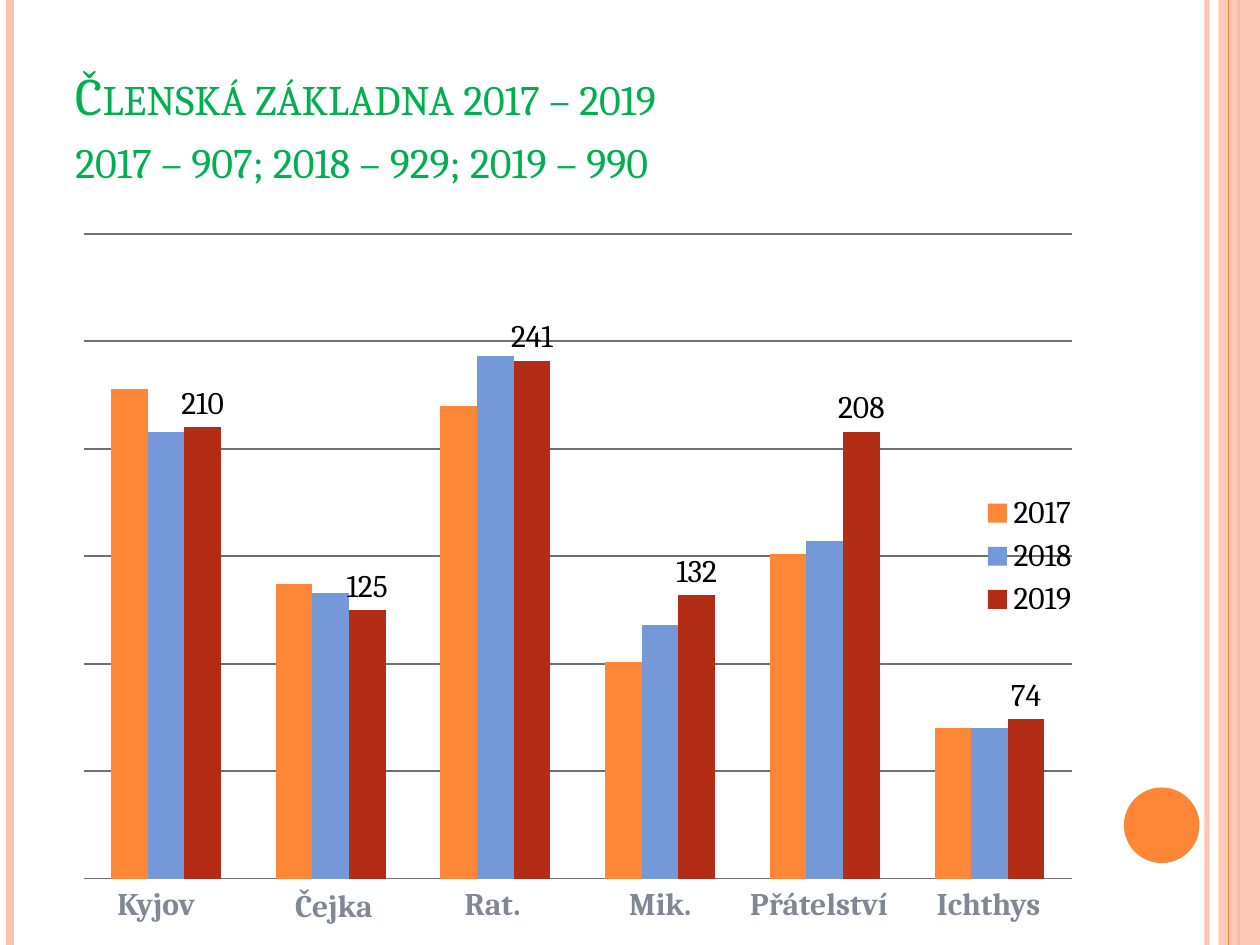
from lxml.etree import SubElement
from pptx import Presentation
from pptx.chart.data import CategoryChartData
from pptx.dml.color import RGBColor
from pptx.enum.chart import XL_CHART_TYPE as ChartType
from pptx.enum.chart import XL_LABEL_POSITION as LabelPos
from pptx.enum.chart import XL_LEGEND_POSITION as LegendPos
from pptx.enum.shapes import MSO_CONNECTOR as Connector
from pptx.enum.shapes import MSO_SHAPE as Shape
from pptx.enum.text import MSO_ANCHOR as Anchor
from pptx.enum.text import PP_ALIGN as Align
from pptx.oxml.ns import qn
from pptx.util import Inches, Pt

ORANGE = RGBColor(0xFE, 0x86, 0x37)
BLUE = RGBColor(0x75, 0x98, 0xD9)
RED = RGBColor(0xB3, 0x2C, 0x16)
PEACH = RGBColor(0xFE, 0xC3, 0xAE)
GREEN = RGBColor(0x00, 0xB0, 0x50)
SLATE = RGBColor(0x81, 0x88, 0x95)
GRID = RGBColor(0x70, 0x70, 0x70)
BLACK = RGBColor(0, 0, 0)
FONT = "Cambria"
WIDTH, HEIGHT = 10, 7.5
MARGIN, CONTENT_WIDTH = 0.5, 8.17

TITLE_LINES = ["Členská základna 2017 – 2019", "2017 – 907; 2018 – 929; 2019 – 990"]
MEMBERS = [
    ("2017", ORANGE, (228, 137, 220, 101, 151, 70)),
    ("2018", BLUE, (208, 133, 243, 118, 157, 70)),
    ("2019", RED, (210, 125, 241, 132, 208, 74)),
]
GROUPS = [
    ("Kyjov", 0.76, 6.97, 0.96),
    ("Čejka", 2.17, 6.98, 0.96),
    ("Rat.", 3.54, 6.97, 0.74),
    ("Mik.", 4.85, 6.97, 0.78),
    ("Přátelství", 5.75, 6.97, 1.5),
    ("Ichthys", 7.25, 6.97, 1.19),
]
STRIPES_BEHIND = [(9.58, PEACH, 3, 93), (0.08, PEACH, 4.5, 100), (9.83, ORANGE, 1.5, 100)]
STRIPES_FRONT = [(9.75, ORANGE, 0.75, 100)]


def set_opacity(part, percent):
    if percent < 100:
        colour = next(part.iter(qn("a:srgbClr")))
        SubElement(colour, qn("a:alpha")).set("val", str(percent * 1000))


def add_stripes(slide, stripes):
    for x, colour, weight, opacity in stripes:
        stripe = slide.shapes.add_connector(
            Connector.STRAIGHT, Inches(x), 0, Inches(x), Inches(HEIGHT))
        stripe.line.color.rgb = colour
        stripe.line.width = Pt(weight)
        properties = stripe._element.spPr
        set_opacity(properties, opacity)
        SubElement(properties, qn("a:effectLst"))


def add_solid(slide, kind, box, colour, opacity=100):
    solid = slide.shapes.add_shape(kind, *map(Inches, box))
    solid.shadow.inherit = False
    solid.fill.solid()
    solid.fill.fore_color.rgb = colour
    solid.line.fill.background()
    set_opacity(solid._element.spPr, opacity)


def add_run(paragraph, text, size, colour, bold=False):
    run = paragraph.add_run()
    run.text = text
    run.font.name = FONT
    run.font.size = Pt(size)
    run.font.bold = bold
    run.font.color.rgb = colour
    return run


def add_title(slide):
    frame = slide.shapes.add_textbox(
        *map(Inches, (MARGIN, 0.3, CONTENT_WIDTH, 1.25))).text_frame
    frame.word_wrap = True
    frame.vertical_anchor = Anchor.BOTTOM
    paragraph = frame.paragraphs[0]
    for index, line in enumerate(TITLE_LINES):
        if index:
            paragraph.add_line_break()
        run = add_run(paragraph, line, 30, GREEN)
        run.font._element.set("cap", "small")


def add_members_chart(slide):
    data = CategoryChartData()
    data.categories = [str(number) for number in range(1, len(GROUPS) + 1)]
    for year, _, counts in MEMBERS:
        data.add_series(year, counts)
    chart = slide.shapes.add_chart(
        ChartType.COLUMN_CLUSTERED,
        *map(Inches, (MARGIN, 1.75, CONTENT_WIDTH, 5.33)), data).chart
    chart.has_title = False
    chart.font.name = FONT
    chart.font.size = Pt(18)
    chart.font.color.rgb = BLACK

    chart.category_axis.visible = False
    scale = chart.value_axis
    scale.visible = False
    scale.minimum_scale, scale.maximum_scale, scale.major_unit = 0, 300, 50
    scale.has_major_gridlines = True
    scale.major_gridlines.format.line.color.rgb = GRID
    scale.major_gridlines.format.line.width = Pt(1)

    chart.has_legend = True
    chart.legend.position = LegendPos.RIGHT
    chart.legend.include_in_layout = True

    plot = chart.plots[0]
    plot.gap_width = 150
    plot.overlap = 0
    plot.vary_by_categories = False
    for series, (_, colour, _) in zip(plot.series, MEMBERS):
        series.invert_if_negative = False
        series.format.fill.solid()
        series.format.fill.fore_color.rgb = colour
    labels = plot.series[-1].data_labels
    labels.show_value = True
    labels.position = LabelPos.OUTSIDE_END


def add_group_names(slide):
    for name, left, top, width in GROUPS:
        frame = slide.shapes.add_textbox(
            *map(Inches, (left, top, width, 0.4))).text_frame
        frame.word_wrap = False
        paragraph = frame.paragraphs[0]
        paragraph.alignment = Align.CENTER
        add_run(paragraph, name, 18, SLATE, bold=True)


def main():
    deck = Presentation()
    deck.slide_width, deck.slide_height = Inches(WIDTH), Inches(HEIGHT)
    slide = deck.slides.add_slide(deck.slide_layouts[6])
    add_stripes(slide, STRIPES_BEHIND)
    add_solid(slide, Shape.RECTANGLE, (9.67, 0, 0.33, HEIGHT), PEACH, 87)
    add_stripes(slide, STRIPES_FRONT)
    add_solid(slide, Shape.OVAL, (8.92, 6.25, 0.6, 0.6), ORANGE)
    add_title(slide)
    add_members_chart(slide)
    add_group_names(slide)
    deck.save("out.pptx")


if __name__ == "__main__":
    main()
